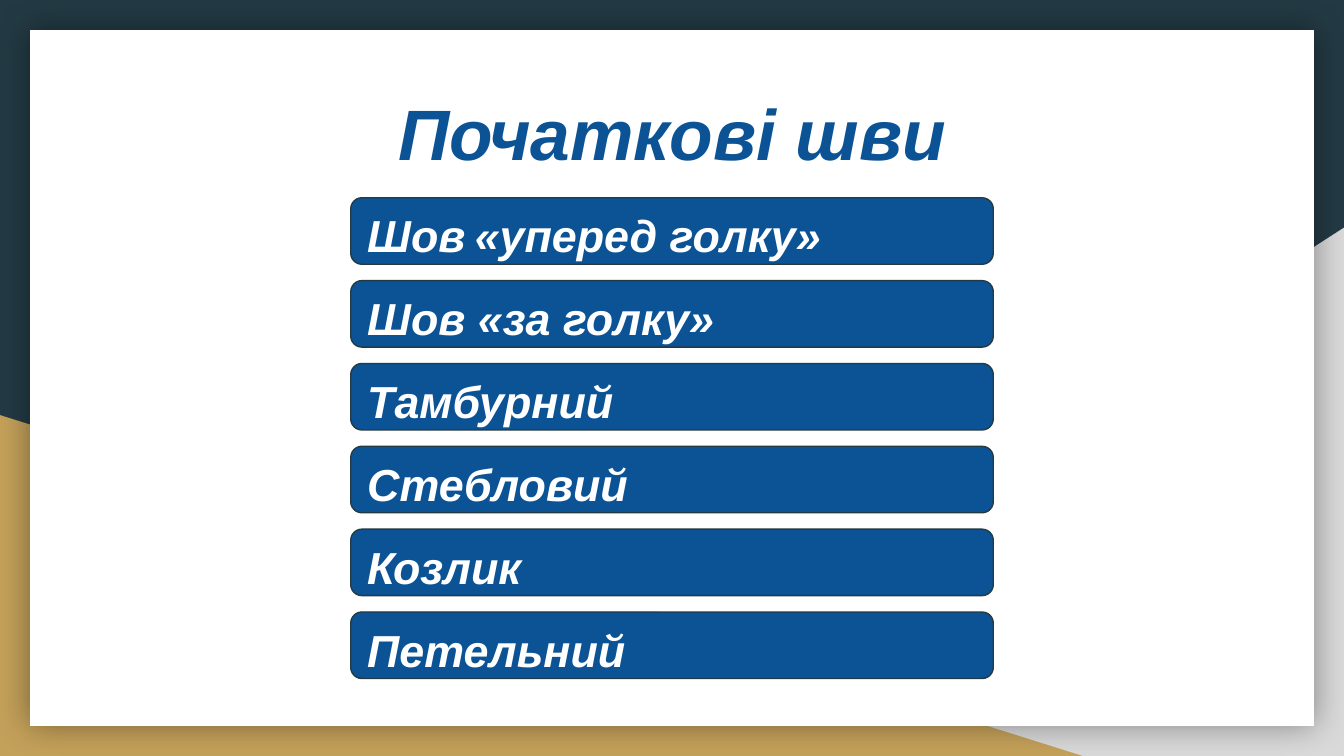
from lxml import etree
from pptx import Presentation
from pptx.dml.color import RGBColor
from pptx.enum.shapes import MSO_SHAPE
from pptx.enum.text import MSO_ANCHOR, PP_ALIGN
from pptx.oxml.ns import qn
from pptx.util import Pt

RECTANGLE = MSO_SHAPE.RECTANGLE
ROUNDED = MSO_SHAPE.ROUNDED_RECTANGLE
TRIANGLE = MSO_SHAPE.RIGHT_TRIANGLE
TOP, MIDDLE = MSO_ANCHOR.TOP, MSO_ANCHOR.MIDDLE
LEFT, CENTER = PP_ALIGN.LEFT, PP_ALIGN.CENTER

WIDTH, HEIGHT = 720, 405
DARK, BLUE, GOLD, GREY, WHITE = "233A44", "0B5395", "C4A15A", "D9D9D9", "FFFFFF"
INSET = 7.2
TITLE = "Початкові шви"
# Each stitch is a list of (text, size) spans
STITCHES = [
    [("Шов", 24), (" ", 18), ("«уперед голку»", 24)],
    [("Шов «за голку»", 24)],
    [("Тамбурний", 24)],
    [("Стебловий", 24)],
    [("Козлик", 24)],
    [("Петельний", 24)],
]


def colour(value):
    return RGBColor.from_string(value)


def add_filled(page, kind, box, fill):
    shape = page.shapes.add_shape(kind, *(Pt(length) for length in box))
    shape.shadow.inherit = False
    shape.fill.solid()
    shape.fill.fore_color.rgb = colour(fill)
    shape.line.fill.background()
    return shape


def write_text(shape, spans, text_colour, anchor, align, top=INSET, spacing=1.0):
    frame = shape.text_frame
    frame_format = {
        "word_wrap": True, "vertical_anchor": anchor, "margin_top": Pt(top),
        "margin_left": Pt(INSET), "margin_right": Pt(INSET), "margin_bottom": Pt(INSET),
    }
    for name, value in frame_format.items():
        setattr(frame, name, value)
    para = frame.paragraphs[0]
    para.alignment = align
    para.line_spacing = spacing
    for text, size in spans:
        span = para.add_run()
        span.text = text
        span.font.color.rgb = colour(text_colour)
        font_format = {"name": "Arial", "size": Pt(size), "bold": True, "italic": True}
        for name, value in font_format.items():
            setattr(span.font, name, value)


def add_soft_shadow(shape, blur, opacity):
    effects = shape._element.spPr.find(qn("a:effectLst"))
    shadow = etree.SubElement(effects, qn("a:outerShdw"), blurRad=str(Pt(blur)),
                              dist="0", dir="0", algn="ctr", rotWithShape="0")
    black = etree.SubElement(shadow, qn("a:srgbClr"), val="000000")
    etree.SubElement(black, qn("a:alpha"), val=str(opacity * 1000))


def draw_backdrop(page, box):
    left, top, width, height = box
    right, bottom = left + width, top + height
    page.background.fill.solid()
    page.background.fill.fore_color.rgb = colour(DARK)

    # Corner triangles, the grey one mirrored
    grey_width, grey_height = 438, 283
    grey = add_filled(page, TRIANGLE,
                      (right - grey_width, bottom - grey_height, grey_width, grey_height), GREY)
    grey._element.spPr.find(qn("a:xfrm")).set("flipH", "1")
    gold_height = 182.6
    add_filled(page, TRIANGLE, (left, bottom - gold_height, 580, gold_height), GOLD)

    # White panel
    margin = 16.1
    panel = add_filled(page, RECTANGLE, (left + margin, top + margin,
                                         width - 2 * margin, height - 2 * margin), WHITE)
    add_soft_shadow(panel, blur=18, opacity=40)


def draw_title(page, box):
    title = page.shapes.add_textbox(*(Pt(length) for length in box))
    write_text(title, [(TITLE, 38.2)], BLUE, TOP, CENTER, top=11)


def draw_stitches(page, box):
    left, top, width, height = box
    bar_height = 35.6
    step = (height - bar_height) / (len(STITCHES) - 1)
    for index, spans in enumerate(STITCHES):
        bar = add_filled(page, ROUNDED, (left, top + index * step, width, bar_height), BLUE)
        bar.adjustments[0] = 0.167
        bar.line.color.rgb = colour(DARK)
        bar.line.width = Pt(0.75)
        write_text(bar, spans, WHITE, MIDDLE, LEFT, spacing=1.15)


def main():
    deck = Presentation()
    deck.slide_width, deck.slide_height = Pt(WIDTH), Pt(HEIGHT)
    page = deck.slides.add_slide(deck.slide_layouts[6])
    draw_backdrop(page, (0, 0, WIDTH, HEIGHT))
    draw_title(page, (201.6, 36.7, 316.8, 74.9))
    draw_stitches(page, (187.9, 106, 344.2, 257.5))
    deck.save("out.pptx")


if __name__ == "__main__":
    main()
